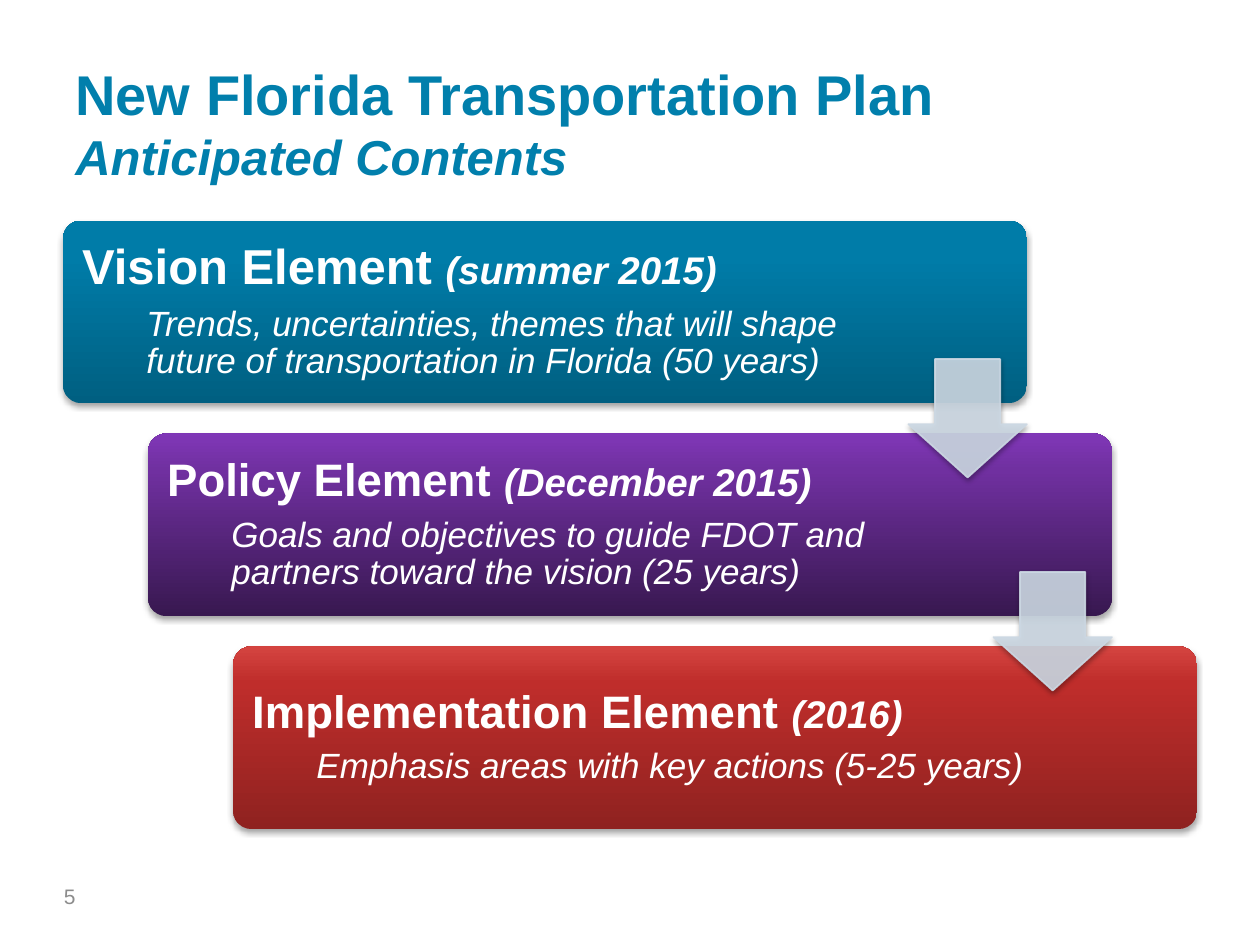
from lxml import etree
from pptx import Presentation
from pptx import util as u
from pptx.dml.color import RGBColor
from pptx.enum import shapes, text
from pptx.oxml.ns import qn

COLORS = {
    "title": "017FAC",
    "white": "FFFFFF",
    "arrow": "CCD8E3",
    "number": "8C8C8C",
    "shadow": "000000",
}
CARD_SIZE = (7.65, 1.45)
ARROW_SIZE = 0.94
FIRST_LEFT, FIRST_TOP = 0.5, 1.75
STEP_X, STEP_Y = 0.675, 1.69

# heading, heading size, date, description, right inset, gradient from bottom to top
ELEMENTS = [
    ("Vision Element ", 28, "(summer 2015)",
     "Trends, uncertainties, themes that will shape future of "
     "transportation in Florida (50 years)",
     1.26, ("005F81", "007CA8", "007CA8")),
    ("Policy Element ", 26, "(December 2015)",
     "Goals and objectives to guide FDOT and partners toward the vision (25 years)",
     1.73, ("381850", "7030A0", "8037B7")),
    ("Implementation Element ", 26, "(2016)",
     "Emphasis areas with key actions (5-25 years)",
     0.96, ("8F2220", "BF2D2B", "D44440")),
]


def add_run(paragraph, content, size, color, bold=False, italic=False):
    run = paragraph.add_run()
    run.text = content
    run.font.name = "Arial"
    run.font.size = u.Pt(size)
    run.font.bold = bold
    run.font.italic = italic
    run.font.color.rgb = RGBColor.from_string(COLORS[color])


def add_text_box(slide, left, top, width, height, anchor):
    """Add a wrapping text box and return its first paragraph."""
    box = slide.shapes.add_textbox(
        u.Inches(left), u.Inches(top), u.Inches(width), u.Inches(height))
    box.text_frame.word_wrap = True
    box.text_frame.vertical_anchor = anchor
    return box.text_frame.paragraphs[0]


def add_color(parent, color, alpha=100):
    element = etree.SubElement(parent, qn("a:srgbClr"), val=color)
    if alpha < 100:
        etree.SubElement(element, qn("a:alpha"), val=str(alpha * 1000))


def set_shadow(shape):
    shape.shadow.inherit = False
    effects = shape._element.spPr.find(qn("a:effectLst"))
    shadow = etree.SubElement(
        effects, qn("a:outerShdw"), blurRad=str(u.Pt(3.1)), dist=str(u.Pt(1.8)),
        dir="5400000", rotWithShape="0")
    add_color(shadow, COLORS["shadow"], 35)


def set_gradient(shape, colors):
    """Fill from bottom to top with three colors."""
    shape.fill.gradient()
    shape.fill.gradient_angle = 90
    stops = shape._element.spPr.find(qn("a:gradFill")).find(qn("a:gsLst"))
    stops.clear()
    for position, color in zip((0, 80, 100), colors):
        add_color(etree.SubElement(stops, qn("a:gs"), pos=str(position * 1000)), color)


def add_card(slide, left, top, element):
    heading, heading_size, date, description, right_inset, gradient = element
    card = slide.shapes.add_shape(
        shapes.MSO_SHAPE.ROUNDED_RECTANGLE, u.Inches(left), u.Inches(top),
        *map(u.Inches, CARD_SIZE))
    card.adjustments[0] = 0.1
    set_gradient(card, gradient)
    card.line.fill.background()
    set_shadow(card)

    frame = card.text_frame
    frame.word_wrap = True
    frame.vertical_anchor = text.MSO_ANCHOR.MIDDLE
    frame.margin_left = frame.margin_top = frame.margin_bottom = u.Inches(0.11)
    frame.margin_right = u.Inches(right_inset)

    title = frame.paragraphs[0]
    add_run(title, heading, heading_size, "white", bold=True)
    add_run(title, date, 22, "white", bold=True, italic=True)
    title.space_after = u.Pt(6)

    detail = frame.add_paragraph()
    detail.level = 1
    detail._p.get_or_add_pPr().set("marL", str(u.Inches(0.51)))
    add_run(detail, description, 20, "white", italic=True)
    detail.space_after = u.Pt(3)

    for paragraph in frame.paragraphs:
        paragraph.alignment = text.PP_ALIGN.LEFT
        paragraph.line_spacing = 0.9


def add_arrow(slide, left, top):
    arrow = slide.shapes.add_shape(
        shapes.MSO_SHAPE.DOWN_ARROW, u.Inches(left), u.Inches(top),
        u.Inches(ARROW_SIZE), u.Inches(ARROW_SIZE))
    arrow.adjustments[0] = 0.55
    arrow.adjustments[1] = 0.45
    color = RGBColor.from_string(COLORS["arrow"])
    arrow.fill.solid()
    arrow.fill.fore_color.rgb = color
    arrow.line.color.rgb = color
    arrow.line.width = u.Pt(1)
    for element in arrow._element.spPr.iter(qn("a:srgbClr")):
        etree.SubElement(element, qn("a:alpha"), val="90000")
    set_shadow(arrow)


def main():
    presentation = Presentation()
    presentation.slide_width = u.Inches(10)
    presentation.slide_height = u.Inches(7.5)
    slide = presentation.slides.add_slide(presentation.slide_layouts[6])

    title = add_text_box(slide, 0.5, 0, 9, 1.52, text.MSO_ANCHOR.BOTTOM)
    add_run(title, "New Florida Transportation Plan", 32, "title", bold=True)
    title.add_line_break()
    add_run(title, "Anticipated Contents", 28, "title", bold=True, italic=True)

    for index, element in enumerate(ELEMENTS):
        add_card(slide, FIRST_LEFT + index * STEP_X, FIRST_TOP + index * STEP_Y, element)

    arrow_left = FIRST_LEFT + CARD_SIZE[0] - ARROW_SIZE
    for index in range(len(ELEMENTS) - 1):
        add_arrow(slide, arrow_left + index * STEP_X, 2.85 + index * STEP_Y)

    number = add_text_box(slide, 0.41, 6.91, 0.73, 0.4, text.MSO_ANCHOR.MIDDLE)
    add_run(number, "5", 12, "number")

    presentation.save("out.pptx")


if __name__ == "__main__":
    main()
